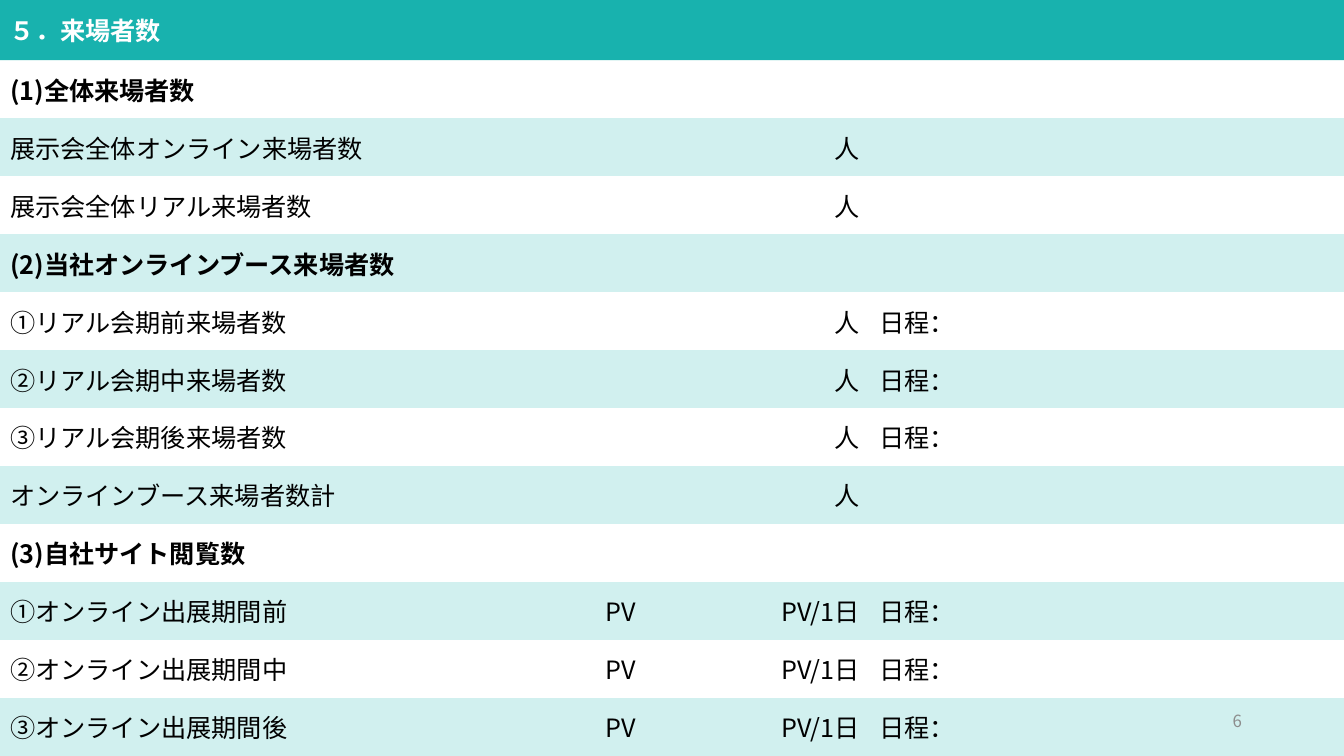
from pptx import Presentation
from pptx.dml.color import RGBColor
from pptx.enum.shapes import MSO_SHAPE as Shape
from pptx.enum.text import MSO_ANCHOR as Anchor, PP_ALIGN as Align
from pptx.oxml.ns import qn
from pptx.util import Cm, Pt
from lxml.etree import SubElement

FONT = "Noto Sans CJK JP"
TEAL, PALE, BLACK, WHITE, GREY = "18B2AE", "D1F0EF", "000000", "FFFFFF", "8C8C8C"
PLAIN_TABLE = "{2D5ABB26-0587-4C30-8999-92F81FD0307C}"

TITLE = "５．来場者数"
PAGE_NUMBER = "6"
SCHEDULE = "日程："
ROWS = [
    ("(1)全体来場者数",),
    ("展示会全体オンライン来場者数", "人", ""),
    ("展示会全体リアル来場者数", "人", ""),
    ("(2)当社オンラインブース来場者数",),
    ("①リアル会期前来場者数", "人", SCHEDULE),
    ("②リアル会期中来場者数", "人", SCHEDULE),
    ("③リアル会期後来場者数", "人", SCHEDULE),
    ("オンラインブース来場者数計", "人", ""),
    ("(3)自社サイト閲覧数",),
    ("①オンライン出展期間前", "PV", "PV/1日", SCHEDULE),
    ("②オンライン出展期間中", "PV", "PV/1日", SCHEDULE),
    ("③オンライン出展期間後", "PV", "PV/1日", SCHEDULE),
]

PAGE_WIDTH, PAGE_HEIGHT, BAR_HEIGHT = Cm(33.87), Cm(19.05), Cm(1.52)
COLUMN_WIDTHS = [Cm(9.81), Cm(6.48), Cm(5.62), Cm(11.96)]


def color(value):
    return RGBColor.from_string(value)


def write(frame, text, size=18, ink=BLACK, bold=False, align=Align.LEFT):
    frame.text = text
    para = frame.paragraphs[0]
    para.alignment = align
    for span in para.runs:
        font = span.font
        font.name, font.size, font.bold = FONT, Pt(size), bold
        font.color.rgb = color(ink)
        SubElement(font._element, qn("a:ea")).set("typeface", FONT)


def add_title(page):
    bar = page.shapes.add_shape(Shape.RECTANGLE, 0, 0, PAGE_WIDTH, BAR_HEIGHT)
    bar.shadow.inherit = False
    bar.fill.solid()
    bar.fill.fore_color.rgb = color(TEAL)
    bar.line.fill.background()
    bar.text_frame.vertical_anchor = Anchor.MIDDLE
    write(bar.text_frame, TITLE, ink=WHITE, bold=True)


def add_visitor_table(page):
    height = PAGE_HEIGHT - BAR_HEIGHT
    frame = page.shapes.add_table(len(ROWS), len(COLUMN_WIDTHS), 0, BAR_HEIGHT, PAGE_WIDTH, height)
    table = frame.table
    table.first_row = table.horz_banding = False
    table._tbl.tblPr.find(qn("a:tableStyleId")).text = PLAIN_TABLE
    for column, width in zip(table.columns, COLUMN_WIDTHS):
        column.width = width

    for row, texts in enumerate(ROWS):
        heading = len(texts) == 1
        if heading:
            table.cell(row, 0).merge(table.cell(row, 2))
            places = [0]
        elif len(texts) == 3:
            table.cell(row, 1).merge(table.cell(row, 2))
            places = [0, 1, 3]
        else:
            places = range(4)
        for cell in table.rows[row].cells:
            cell.vertical_anchor = Anchor.MIDDLE
            if row % 2:
                cell.fill.solid()
                cell.fill.fore_color.rgb = color(PALE)
            else:
                cell.fill.background()
        for column, text in zip(places, texts):
            align = Align.RIGHT if column in (1, 2) else Align.LEFT
            write(table.cell(row, column).text_frame, text, bold=heading, align=align)


def add_page_number(page):
    box = page.shapes.add_textbox(Cm(23.93), Cm(17.65), Cm(7.62), Cm(1.02))
    box.text_frame.word_wrap = True
    box.text_frame.vertical_anchor = Anchor.MIDDLE
    write(box.text_frame, PAGE_NUMBER, size=12, ink=GREY, align=Align.RIGHT)


def main():
    deck = Presentation()
    deck.slide_width, deck.slide_height = PAGE_WIDTH, PAGE_HEIGHT
    page = deck.slides.add_slide(deck.slide_layouts[6])
    add_title(page)
    add_visitor_table(page)
    add_page_number(page)
    deck.save("out.pptx")


if __name__ == "__main__":
    main()
